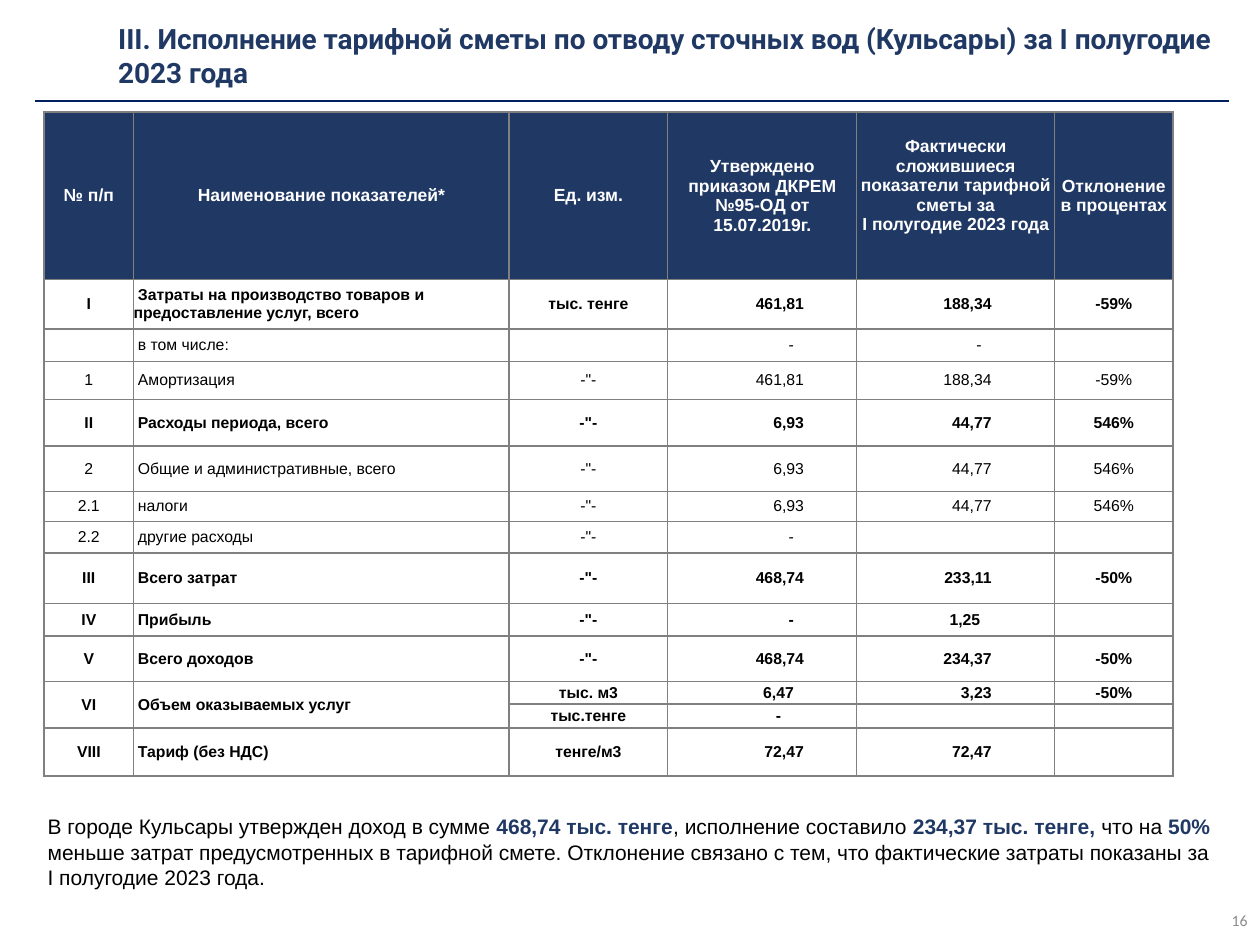
from lxml import etree
from pptx import Presentation
from pptx.dml.color import RGBColor
from pptx.enum.shapes import MSO_CONNECTOR
from pptx.enum.text import MSO_ANCHOR, MSO_AUTO_SIZE, PP_ALIGN
from pptx.oxml.ns import qn
from pptx.util import Inches, Pt

LINE = MSO_CONNECTOR.STRAIGHT
MID, TOP = MSO_ANCHOR.MIDDLE, MSO_ANCHOR.TOP
GROW = MSO_AUTO_SIZE.SHAPE_TO_FIT_TEXT
LEFT, MIDST, RIGHT = PP_ALIGN.LEFT, PP_ALIGN.CENTER, PP_ALIGN.RIGHT
COLORS = {"navy": "203864", "rule": "002060", "grid": "808080",
          "ink": "000000", "white": "FFFFFF", "page": "8C8C8C"}

HEADS = ["№ п/п", "Наименование показателей*", "Ед. изм.",
         "Утверждено приказом ДКРЕМ\v№95-ОД от 15.07.2019г.",
         "Фактически сложившиеся показатели тарифной сметы за\vI полугодие 2023 года",
         "Отклонение в процентах"]
ROWS = [
    ["I", " Затраты на производство товаров и предоставление услуг, всего",
     "тыс. тенге", "461,81", "188,34", "-59%"],
    ["", " в том числе:", "", "-", "-", ""],
    ["1", " Амортизация", '-"-', "461,81", "188,34", "-59%"],
    ["II", " Расходы периода, всего", '-"-', "6,93", "44,77", "546%"],
    ["2", " Общие и административные, всего", '-"-', "6,93", "44,77", "546%"],
    ["2.1", " налоги", '-"-', "6,93", "44,77", "546%"],
    ["2.2", " другие расходы", '-"-', "-", "", ""],
    ["III", " Всего затрат", '-"-', "468,74", "233,11", "-50%"],
    ["IV", " Прибыль", '-"-', "-", "1,25", ""],
    ["V", " Всего доходов", '-"-', "468,74", "234,37", "-50%"],
    ["VI", " Объем оказываемых услуг", "тыс. м3", "6,47", "3,23", "-50%"],
    ["", "", "тыс.тенге", "-", "", ""],
    ["VIII", " Тариф (без НДС)", "тенге/м3", "72,47", "72,47", ""],
]
BOLD = {1, 4, 8, 9, 10, 11, 12, 13}
WIDTHS = [0.71, 2.98, 1.26, 1.5, 1.57, 0.94]
HEIGHTS = [1.33, 0.39, 0.26, 0.3, 0.37, 0.36, 0.24, 0.25, 0.4, 0.26, 0.36, 0.18, 0.19, 0.38]
INSETS = {3: 0.42, 4: 0.5}
SHIFTS = {(9, 4): 0.59, (11, 3): 0.5, (12, 3): 0.6}
NOTE = [
    ("В городе Кульсары утвержден доход в сумме ", False),
    ("468,74 тыс. тенге", True),
    (", исполнение составило ", False),
    ("234,37 тыс. тенге, ", True),
    ("что на", False),
    (" 50% ", True),
    ("меньше затрат предусмотренных в тарифной смете. Отклонение связано с тем, "
     "что фактические затраты показаны за I полугодие 2023 года.", False),
]


def tint(name):
    """Return the named colour."""
    return RGBColor.from_string(COLORS[name])


def style(run, size, face, color, bold=False):
    """Set the font of a run."""
    font = run.font
    font.size, font.name, font.bold = Pt(size), face, bold
    font.color.rgb = tint(color)


def write(slide, box, parts, size, face, align=LEFT, anchor=MID):
    """Add a wrapped text box and return its frame; parts are text, colour, bold."""
    frame = slide.shapes.add_textbox(*map(Inches, box)).text_frame
    frame.word_wrap = True
    frame.vertical_anchor = anchor
    para = frame.paragraphs[0]
    para.alignment = align
    for text, color, bold in parts:
        run = para.add_run()
        run.text = text
        style(run, size, face, color, bold)
    return frame


def edge(cell):
    """Draw a thin grid line on each side of a cell."""
    props = cell._tc.get_or_add_tcPr()
    for spot, side in enumerate(("lnL", "lnR", "lnT", "lnB")):
        line = etree.Element(qn("a:" + side), w=str(Pt(1)))
        fill = etree.SubElement(line, qn("a:solidFill"))
        etree.SubElement(fill, qn("a:srgbClr"), val=COLORS["grid"])
        props.insert(spot, line)


def fill_cell(cell, text, row, col):
    """Write and format one table cell."""
    head = row == 0
    size = 10 if head else 9
    cell.margin_left = cell.margin_right = cell.margin_top = cell.margin_bottom = 0
    cell.vertical_anchor = MID
    if head:
        cell.fill.solid()
        cell.fill.fore_color.rgb = tint("navy")
        if col == 4:
            cell.margin_bottom = Inches(0.16)
    else:
        cell.fill.background()
    edge(cell)
    cell.text_frame.text = text
    para = cell.text_frame.paragraphs[0]
    para.alignment = LEFT if col == 1 and not head else MIDST
    if not head and col in INSETS:
        para.alignment = RIGHT
        gap = INSETS[col] + (0.08 if text == "-" else 0)
        cell.margin_right = Inches(SHIFTS.get((row, col), gap))
    for run in para.runs:
        style(run, size, "Arial", "white" if head else "ink", head or row in BOLD)
    if not text:
        etree.SubElement(para._p, qn("a:endParaRPr"), sz=str(size * 100))


def add_grid(slide, box):
    """Add the table of tariff items."""
    data = [HEADS] + ROWS
    table = slide.shapes.add_table(len(data), len(HEADS), *map(Inches, box)).table
    table.horz_banding = False
    for col, width in zip(table.columns, WIDTHS):
        col.width = Inches(width)
    for line, height in zip(table.rows, HEIGHTS):
        line.height = Inches(height)
    for row, texts in enumerate(data):
        for col, text in enumerate(texts):
            fill_cell(table.cell(row, col), text, row, col)
    for col in (0, 1):
        table.cell(11, col).merge(table.cell(12, col))


def add_head(slide, box):
    """Add the title and the rule below it."""
    left, top, width, height = box
    text = "III. Исполнение тарифной сметы по отводу сточных вод (Кульсары) за I полугодие 2023 года"
    write(slide, (left + 0.56, top, width - 0.54, height), [(text, "navy", True)], 16, "Roboto")
    low = Inches(top + height + 0.06)
    rule = slide.shapes.add_connector(LINE, Inches(left), low, Inches(left + width), low)
    rule.line.color.rgb = tint("rule")
    rule.line.width = Pt(1)
    etree.SubElement(rule._element.spPr, qn("a:effectLst"))


def add_note(slide, box):
    """Add the summary below the table."""
    parts = [(text, "navy" if bold else "ink", bold) for text, bold in NOTE]
    frame = write(slide, box, parts, 12, "Arial", anchor=TOP)
    frame.auto_size = GROW


def main():
    """Build and save the slide."""
    deck = Presentation()
    deck.slide_width, deck.slide_height = Inches(10), Inches(7.5)
    slide = deck.slides.add_slide(deck.slide_layouts[6])
    add_note(slide, (0.28, 6.41, 9.5, 0.91))
    add_grid(slide, (0.35, 0.89, 8.98, 5.28))
    write(slide, (7.75, 7.1, 2.25, 0.4), [("16", "page", False)], 9, "Calibri", RIGHT)
    add_head(slide, (0.28, 0.14, 9.47, 0.6))
    deck.save("out.pptx")


if __name__ == "__main__":
    main()
